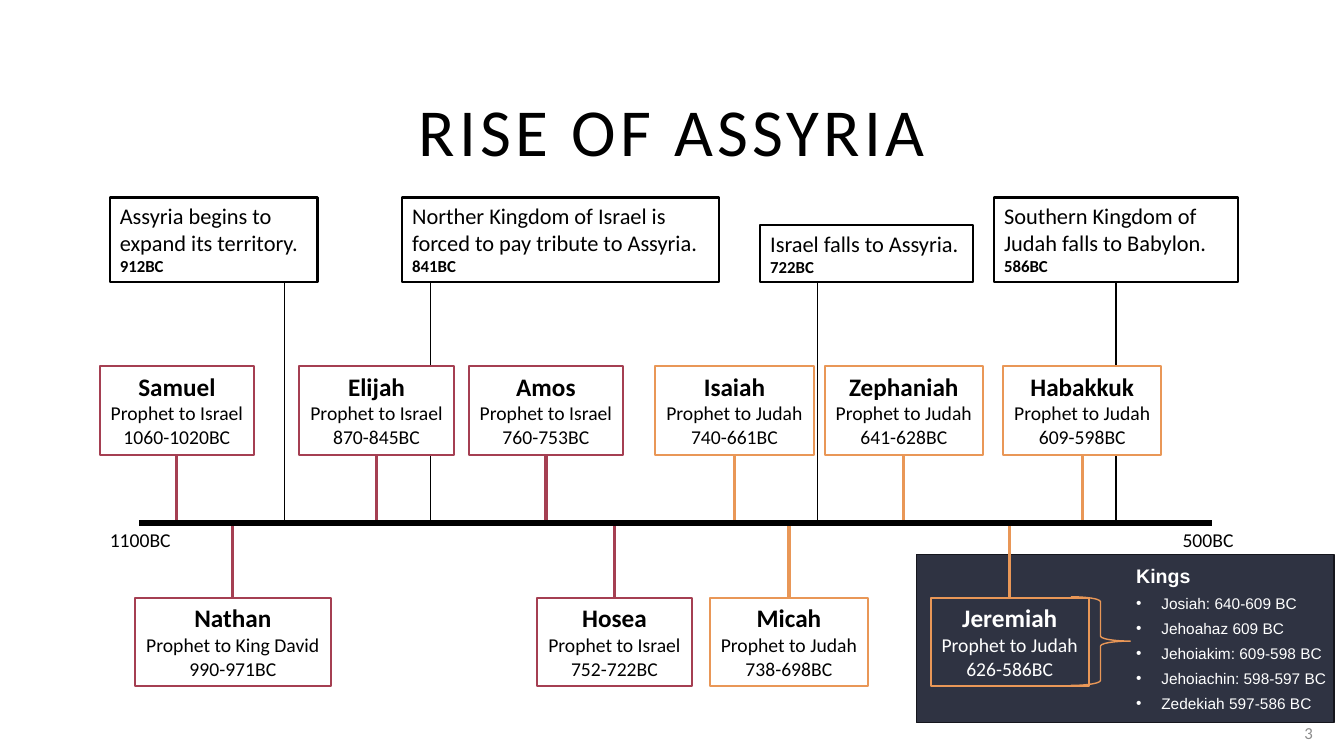
"""Build the Rise of Assyria timeline slide."""
from dataclasses import dataclass

from lxml import etree
from pptx import Presentation
from pptx.dml.color import RGBColor
from pptx.enum.shapes import MSO_CONNECTOR, MSO_SHAPE
from pptx.enum.text import MSO_ANCHOR, MSO_AUTO_SIZE, PP_ALIGN
from pptx.oxml.ns import qn
from pptx.util import Pt

LEFT, CENTER, RIGHT = PP_ALIGN.LEFT, PP_ALIGN.CENTER, PP_ALIGN.RIGHT
TOP, MIDDLE = MSO_ANCHOR.TOP, MSO_ANCHOR.MIDDLE
FIT, FIXED = MSO_AUTO_SIZE.SHAPE_TO_FIT_TEXT, MSO_AUTO_SIZE.NONE
RECT, BRACE = MSO_SHAPE.RECTANGLE, MSO_SHAPE.RIGHT_BRACE
STRAIGHT = MSO_CONNECTOR.STRAIGHT


@dataclass(frozen=True)
class Theme:
    """Colours, fonts and type sizes."""
    black: str = "000000"
    white: str = "FFFFFF"
    gray: str = "8C8C8C"
    israel: str = "A53F52"
    judah: str = "E99757"
    panel: str = "2F3342"
    panel_edge: str = "15161D"
    body: str = "Calibri"
    side: str = "Arial"
    title: int = 48
    name: int = 18
    event: int = 16
    detail: int = 14
    date: int = 12
    king: int = 11


THEME = Theme()
EMU_PER_PX = 9144
SLIDE_W, SLIDE_H = 1333, 750
AXIS_Y, AXIS_START, AXIS_END = 519, 138, 1202
EVENT_BOTTOM = 280
UPPER_Y, LOWER_Y, PROPHET_H = 363, 593, 88
PANEL = (909, 550, 414, 167)
KINGS_AREA = (1073, 557, 260, 157)
BRACE_AREA = (1062, 592, 59, 88)

TITLE = "RISE OF ASSYRIA"
PAGE = "3"
AXIS_LABELS = [("1100BC", 99, 81), ("500BC", 1163, 71)]
EVENTS = [
    ("Assyria begins to expand its territory.", "912BC", 109, 206, 84, 282),
    ("Norther Kingdom of Israel is forced to pay tribute to Assyria.",
     "841BC", 399, 314, 84, 427),
    ("Israel falls to Assyria.", "722BC", 754, 211, 57, 811),
    ("Southern Kingdom of Judah falls to Babylon.", "586BC", 986, 242, 84, 1107),
]
PROPHETS = [
    ("Samuel", "Israel", "1060-1020BC", 99, 153, UPPER_Y),
    ("Nathan", "King David", "990-971BC", 134, 194, LOWER_Y),
    ("Elijah", "Israel", "870-845BC", 297, 153, UPPER_Y),
    ("Amos", "Israel", "760-753BC", 465, 153, UPPER_Y),
    ("Hosea", "Israel", "752-722BC", 533, 153, LOWER_Y),
    ("Isaiah", "Judah", "740-661BC", 650, 157, UPPER_Y),
    ("Micah", "Judah", "738-698BC", 704, 157, LOWER_Y),
    ("Zephaniah", "Judah", "641-628BC", 818, 157, UPPER_Y),
    ("Jeremiah", "Judah", "626-586BC", 923, 157, LOWER_Y),
    ("Habakkuk", "Judah", "609-598BC", 995, 157, UPPER_Y),
]
ON_PANEL = "Jeremiah"
KINGS_HEADING = "Kings"
KINGS = ["Josiah: 640-609 BC", "Jehoahaz 609 BC", "Jehoiakim: 609-598 BC",
         "Jehoiachin: 598-597 BC", "Zedekiah 597-586 BC"]


def px(*lengths):
    return [round(length * EMU_PER_PX) for length in lengths]


def rgb(code):
    return RGBColor.from_string(code)


def style(paragraph, size, color, bold=False, face=THEME.body):
    font = paragraph.font
    font.name, font.size, font.bold = face, Pt(size), bold
    font.color.rgb = rgb(color)


def write(shape, lines, color, align=LEFT, wrap=True, anchor=TOP, fit=FIT):
    frame = shape.text_frame
    frame.word_wrap, frame.vertical_anchor, frame.auto_size = wrap, anchor, fit
    frame.text = "\n".join(text for text, _, _ in lines)
    for paragraph, (_, size, bold) in zip(frame.paragraphs, lines):
        paragraph.alignment = align
        style(paragraph, size, color, bold)


def add_outline(slide, kind, area, edge, weight, fill=None):
    shape = slide.shapes.add_shape(kind, *px(*area))
    shape.shadow.inherit = False
    if fill:
        shape.fill.solid()
        shape.fill.fore_color.rgb = rgb(fill)
    else:
        shape.fill.background()
    shape.line.color.rgb = rgb(edge)
    shape.line.width = Pt(weight)
    return shape


def add_rule(slide, start, end, color, weight):
    rule = slide.shapes.add_connector(STRAIGHT, *px(*start, *end))
    rule.line.color.rgb = rgb(color)
    rule.line.width = Pt(weight)
    etree.SubElement(rule._element.spPr, qn("a:effectLst"))


def add_title(slide):
    title = slide.shapes.title
    title.left, title.top, title.width, title.height = px(65, 84, 1203, 90)
    write(title, [(TITLE, THEME.title, False)], THEME.black, CENTER,
          anchor=MIDDLE, fit=FIXED)
    title.text_frame.paragraphs[0].runs[0]._r.get_or_add_rPr().set("spc", "300")


def add_prophet(slide, name, people, years, left, width, top):
    edge = THEME.judah if people == "Judah" else THEME.israel
    fill, ink = (None, THEME.white) if name == ON_PANEL else (THEME.white, THEME.black)
    box = add_outline(slide, RECT, (left, top, width, PROPHET_H), edge, 1.5, fill)
    lines = [(name, THEME.name, True),
             (f"Prophet to {people}", THEME.detail, False),
             (years, THEME.detail, False)]
    write(box, lines, ink, CENTER, wrap=False)
    middle = left + width / 2
    box_edge = top + PROPHET_H if top < AXIS_Y else top
    add_rule(slide, (middle, box_edge), (middle, AXIS_Y), edge, 2.25)


def add_kings(slide):
    frame = slide.shapes.add_textbox(*px(*KINGS_AREA)).text_frame
    frame.word_wrap, frame.auto_size = True, FIT
    frame.text = "\n".join([KINGS_HEADING, *KINGS])
    for index, paragraph in enumerate(frame.paragraphs):
        margin, indent = px(69, -25) if index else px(44, 0)
        properties = paragraph._p.get_or_add_pPr()
        properties.set("marL", str(margin))
        properties.set("indent", str(indent))
        if index:
            etree.SubElement(properties, qn("a:buFont"), typeface=THEME.side)
            etree.SubElement(properties, qn("a:buChar"), char="•")
        paragraph.line_spacing, paragraph.space_after = 0.9, Pt(6)
        style(paragraph, THEME.king if index else THEME.detail, THEME.white,
              not index, THEME.side)


def main():
    deck = Presentation()
    deck.slide_width, deck.slide_height = px(SLIDE_W, SLIDE_H)
    slide = deck.slides.add_slide(deck.slide_layouts.get_by_name("Title Only"))
    add_outline(slide, RECT, PANEL, THEME.panel_edge, 1, THEME.panel)
    add_title(slide)
    page = slide.shapes.add_textbox(*px(1263, 707, 49, 40))
    write(page, [(PAGE, THEME.date, False)], THEME.gray, RIGHT,
          anchor=MIDDLE, fit=FIXED)
    for *_, date_x in EVENTS:
        add_rule(slide, (date_x, AXIS_Y), (date_x, EVENT_BOTTOM), THEME.black, 1)
    for label, left, width in AXIS_LABELS:
        box = slide.shapes.add_textbox(*px(left, AXIS_Y, width, 34))
        write(box, [(label, THEME.detail, False)], THEME.black, wrap=False)
    for prophet in PROPHETS:
        add_prophet(slide, *prophet)
    for event, date, left, width, height, _ in EVENTS:
        area = (left, EVENT_BOTTOM - height, width, height)
        box = add_outline(slide, RECT, area, THEME.black, 1.5)
        write(box, [(event, THEME.event, False), (date, THEME.date, True)], THEME.black)
    add_rule(slide, (AXIS_START, AXIS_Y), (AXIS_END, AXIS_Y), THEME.black, 4.5)
    add_kings(slide)
    add_outline(slide, BRACE, BRACE_AREA, THEME.judah, 1)
    deck.save("out.pptx")


if __name__ == "__main__":
    main()
